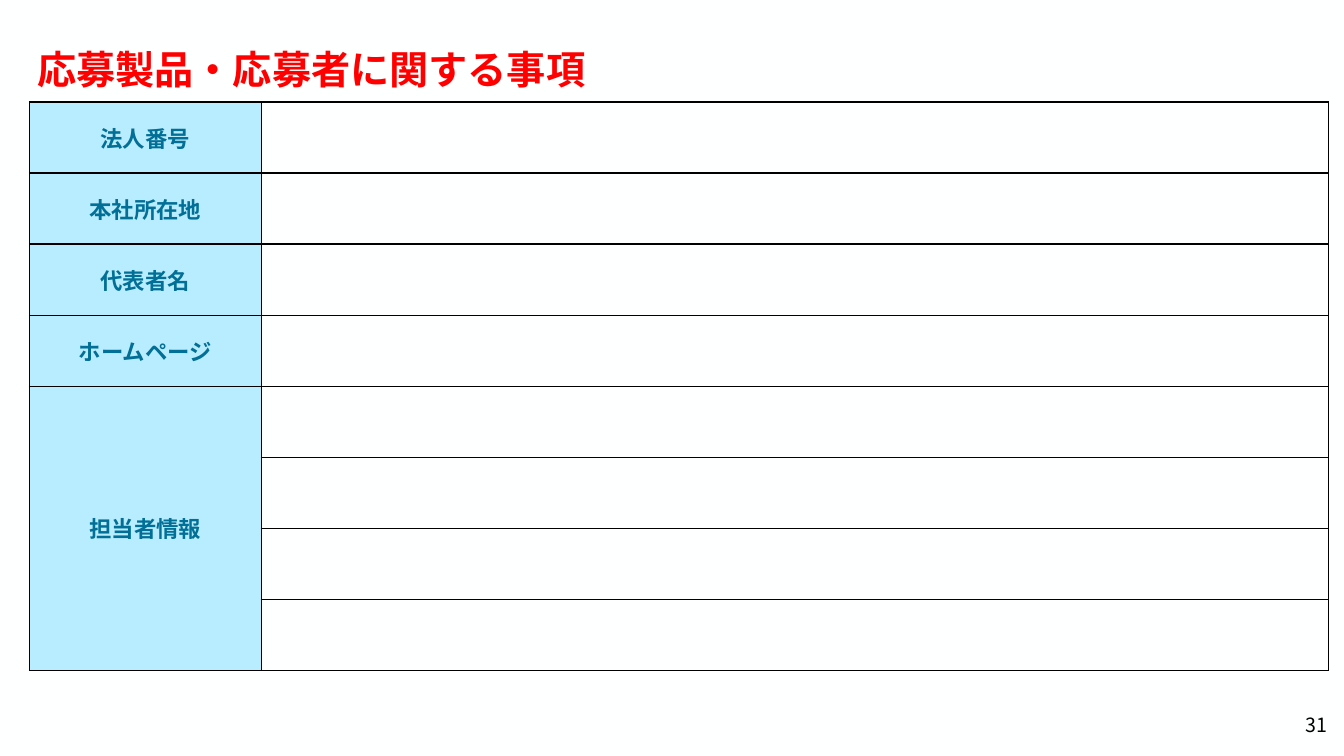
from dataclasses import dataclass

from lxml.etree import SubElement
from pptx import Presentation
from pptx.dml.color import RGBColor
from pptx.enum.text import MSO_ANCHOR, PP_ALIGN
from pptx.oxml.ns import qn
from pptx.util import Cm, Pt

TITLE = "応募製品・応募者に関する事項"
PAGE_NUMBER = "31"
FIELDS = [
    ("法人番号", 1),
    ("本社所在地", 1),
    ("代表者名", 1),
    ("ホームページ", 1),
    ("担当者情報", 4),
]


@dataclass(frozen=True)
class Theme:
    background: str = "FEFFFF"
    title: str = "FF0000"
    label: str = "016F96"
    label_fill: str = "B8ECFF"
    ink: str = "000000"
    title_size: int = 28
    label_size: int = 16
    page_size: int = 14
    border: int = 1
    title_font: str = "Arial"
    label_font: str = "Calibri"
    cjk_font: str = "Noto Sans CJK JP"


THEME = Theme()
COLUMNS = [Cm(5.84), Cm(26.9)]
ROW_HEIGHT = Cm(1.79)


def write(tf, text, *, font, size, color, bold=False, align=PP_ALIGN.LEFT):
    p = tf.paragraphs[0]
    p.alignment = align
    r = p.add_run()
    r.text = text
    r.font.name = font
    r.font.size = Pt(size)
    r.font.bold = bold
    r.font.color.rgb = RGBColor.from_string(color)
    rPr = r.font._element
    rPr.set("lang", "ja-JP")
    SubElement(rPr, qn("a:ea"), typeface=THEME.cjk_font)


def add_borders(cell):
    tcPr = cell._tc.get_or_add_tcPr()
    for i, side in enumerate(("lnL", "lnR", "lnT", "lnB")):
        ln = SubElement(tcPr, qn(f"a:{side}"), w=str(Pt(THEME.border)))
        fill = SubElement(ln, qn("a:solidFill"))
        SubElement(fill, qn("a:srgbClr"), val=THEME.ink)
        tcPr.insert(i, ln)


def add_field_table(slide):
    count = sum(span for _, span in FIELDS)
    table = slide.shapes.add_table(
        count, len(COLUMNS), Cm(0.74), Cm(2.57), sum(COLUMNS), ROW_HEIGHT * count
    ).table
    table.first_row = False
    table.horz_banding = False
    for column, width in zip(table.columns, COLUMNS):
        column.width = width
    for row in table.rows:
        row.height = ROW_HEIGHT
    for cell in table.iter_cells():
        cell.fill.background()
        add_borders(cell)
    top = 0
    for label, span in FIELDS:
        cell = table.cell(top, 0)
        if span > 1:
            cell.merge(table.cell(top + span - 1, 0))
        cell.vertical_anchor = MSO_ANCHOR.MIDDLE
        cell.fill.solid()
        cell.fill.fore_color.rgb = RGBColor.from_string(THEME.label_fill)
        write(cell.text_frame, label, font=THEME.label_font, size=THEME.label_size,
              color=THEME.label, bold=True, align=PP_ALIGN.CENTER)
        top += span


def main():
    prs = Presentation()
    prs.slide_width, prs.slide_height = Cm(33.87), Cm(19.05)
    slide = prs.slides.add_slide(prs.slide_layouts[6])
    background = slide.background.fill
    background.solid()
    background.fore_color.rgb = RGBColor.from_string(THEME.background)

    add_field_table(slide)

    tf = slide.shapes.add_textbox(Cm(32.41), Cm(17.88), Cm(1.45), Cm(1.17)).text_frame
    tf.word_wrap = False
    tf.vertical_anchor = MSO_ANCHOR.MIDDLE
    tf.margin_left = tf.margin_top = 0
    tf.margin_right = tf.margin_bottom = Cm(0.4)
    write(tf, PAGE_NUMBER, font=THEME.cjk_font, size=THEME.page_size,
          color=THEME.ink, align=PP_ALIGN.RIGHT)

    tf = slide.shapes.add_textbox(Cm(0.69), Cm(1.02), Cm(14.48), Cm(1.45)).text_frame
    tf.word_wrap = False
    write(tf, TITLE, font=THEME.title_font, size=THEME.title_size,
          color=THEME.title, bold=True)

    prs.save("out.pptx")


if __name__ == "__main__":
    main()
